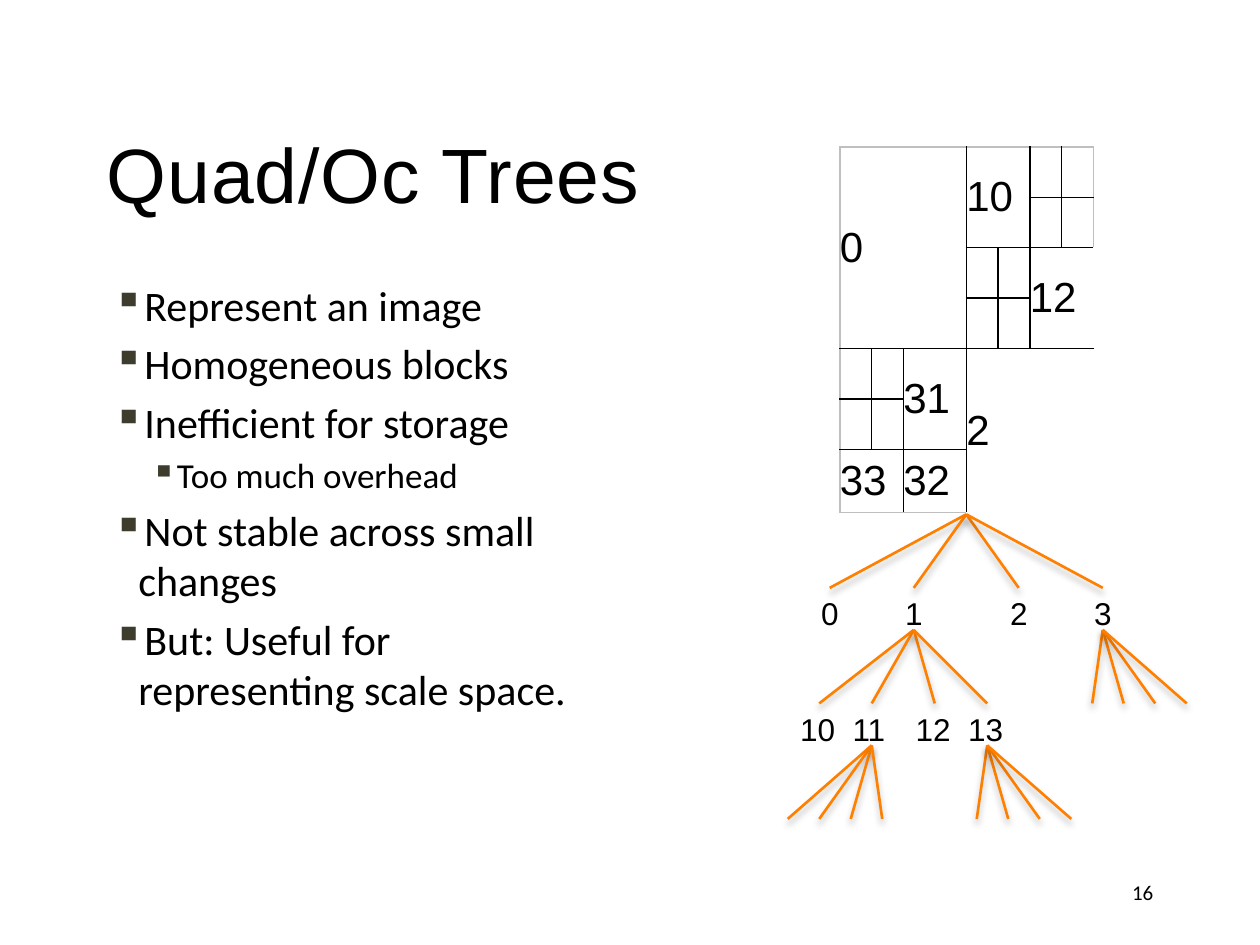
import pptx
import pptx.dml.color
import pptx.enum.shapes
import pptx.enum.text
import pptx.oxml
import pptx.oxml.ns
import pptx.util
from lxml import etree

Cm = pptx.util.Cm
Pt = pptx.util.Pt
RGBColor = pptx.dml.color.RGBColor
Anchor = pptx.enum.text.MSO_ANCHOR
Align = pptx.enum.text.PP_ALIGN
qn = pptx.oxml.ns.qn

BLACK = RGBColor(0x00, 0x00, 0x00)
WHITE = RGBColor(0xFF, 0xFF, 0xFF)
ORANGE = RGBColor(0xFF, 0x80, 0x00)
OLIVE = RGBColor(0x3E, 0x3D, 0x2D)
GREY = RGBColor(0xBF, 0xBF, 0xBF)

UNIT = 2.54 / 12
DROP = 7
STEP = 11

POINTS = [
    ("Represent an image", 0),
    ("Homogeneous blocks", 0),
    ("Inefficient for storage", 0),
    ("Too much overhead", 1),
    ("Not stable across small changes", 0),
    ("But: Useful for representing scale space.", 0),
]
COLS = [0.64, 0.64, 1.27, 0.64, 0.64, 0.64, 0.64]
ROWS = [0.64] * 6 + [1.27]
BLOCKS = {
    (0, 0): (4, 3, "0"), (0, 3): (2, 2, "10"), (2, 5): (2, 2, "12"),
    (4, 2): (2, 1, "31"), (4, 3): (3, 4, "2"),
    (6, 0): (1, 2, "33"), (6, 2): (1, 1, "32"),
}
FANS = [
    (0, 17, [4, 12, 22, 30]),
    (1, 12, [3, 8, 14, 19]),
    (1, 30, [29, 32, 35, 38]),
    (2, 8, [0, 3, 6, 9]),
    (2, 19, [18, 21, 24, 27]),
]
LABELS = [
    (0, [("0", 2), ("1", 10), ("2", 20), ("3", 28)]),
    (1, [("10", 0), ("11", 5), ("12", 11), ("13", 16)]),
]


def style(para, size, face):
    for run in para.runs:
        run.font.size = Pt(size)
        run.font.name = face
        run.font.color.rgb = BLACK


def add_text(shapes, box, text, size, face, anchor=Anchor.TOP, wrap=True):
    shape = shapes.add_textbox(*(Cm(v) for v in box))
    frame = shape.text_frame
    frame.word_wrap = wrap
    frame.vertical_anchor = anchor
    frame.text = text
    style(frame.paragraphs[0], size, face)
    return frame


def add_title(slide, box):
    frame = add_text(slide.shapes, box, "Quad/Oc Trees", 44, "Arial", Anchor.MIDDLE)
    frame.paragraphs[0].runs[0].font._element.set("spc", "50")


def add_points(slide, box):
    frame = add_text(slide.shapes, box, "", 24, "Calibri")
    for num, (text, level) in enumerate(POINTS):
        para = frame.add_paragraph() if num else frame.paragraphs[0]
        para.text = text
        para.level = level
        size = 20 if level else 24
        props = para._p.get_or_add_pPr()
        props.set("marL", str(Cm(1.4 if level else 0.64)))
        props.set("indent", str(-Cm(0.51)))
        tint = etree.SubElement(props, qn("a:buClr"))
        etree.SubElement(tint, qn("a:srgbClr"), val=str(OLIVE))
        etree.SubElement(props, qn("a:buChar"), char="▪")
        if num:
            para.space_before = Pt(size * 0.2)
        style(para, size, "Calibri")


def add_edge(cell, side, color):
    props = cell._tc.get_or_add_tcPr()
    line = etree.SubElement(props, qn("a:ln" + side), w=str(Pt(1)))
    fill = etree.SubElement(line, qn("a:solidFill"))
    etree.SubElement(fill, qn("a:srgbClr"), val=str(color))


def draw_block(table, row, col, high, wide):
    for r in range(row, row + high):
        for c in range(col, col + wide):
            cell = table.cell(r, c)
            sides = [
                ("L", c == col, c == 0),
                ("R", c == col + wide - 1, c == len(COLS) - 1),
                ("T", r == row, r == 0),
                ("B", r == row + high - 1, r == len(ROWS) - 1),
            ]
            for side, edge, outer in sides:
                if edge:
                    add_edge(cell, side, GREY if outer else BLACK)
            cell.fill.solid()
            cell.fill.fore_color.rgb = WHITE


def add_grid(slide, left, top):
    frame = slide.shapes.add_table(
        len(ROWS), len(COLS), Cm(left), Cm(top), Cm(sum(COLS)), Cm(sum(ROWS)))
    table = frame.table
    table.first_row = False
    table.horz_banding = False
    for col, width in zip(table.columns, COLS):
        col.width = Cm(width)
    for row, height in zip(table.rows, ROWS):
        row.height = Cm(height)
    taken = set()
    for (row, col), (high, wide, text) in BLOCKS.items():
        taken.update((row + r, col + c) for r in range(high) for c in range(wide))
        draw_block(table, row, col, high, wide)
        cell = table.cell(row, col)
        if high * wide > 1:
            cell.merge(table.cell(row + high - 1, col + wide - 1))
        cell.margin_left = cell.margin_right = 0
        cell.margin_top = cell.margin_bottom = 0
        cell.vertical_anchor = Anchor.MIDDLE
        cell.text_frame.text = text
        style(cell.text_frame.paragraphs[0], 24, "Arial")
    for row in range(len(ROWS)):
        for col in range(len(COLS)):
            if (row, col) not in taken:
                draw_block(table, row, col, 1, 1)


def add_branch(shapes, start, end):
    line = shapes.add_connector(
        pptx.enum.shapes.MSO_CONNECTOR.STRAIGHT, *(Cm(v) for v in start + end))
    line.line.color.rgb = ORANGE
    line.line.width = Pt(1.5)
    effect = etree.SubElement(line._element.spPr, qn("a:effectLst"))
    shade = etree.SubElement(
        effect, qn("a:outerShdw"), blurRad=str(Pt(4)), dist=str(Pt(3)),
        dir="5400000", rotWithShape="0")
    tint = etree.SubElement(shade, qn("a:srgbClr"), val=str(BLACK))
    etree.SubElement(tint, qn("a:alpha"), val="28000")


def add_tree(slide, left, top):
    shapes = slide.shapes.add_group_shape().shapes

    def place(x, y):
        return left + x * UNIT, top + y * UNIT

    for level, root, kids in FANS:
        for kid in kids:
            add_branch(shapes, place(root, level * STEP),
                       place(kid, level * STEP + DROP))
    for level, names in LABELS:
        for name, x in names:
            box = (*place(x, level * STEP + DROP), 0.52 + 0.35 * len(name), 1.03)
            frame = add_text(shapes, box, name, 18, "Arial", wrap=False)
            frame.auto_size = pptx.enum.text.MSO_AUTO_SIZE.SHAPE_TO_FIT_TEXT


def add_number(slide, box):
    frame = add_text(slide.shapes, box, "16", 12, "Calibri", Anchor.MIDDLE)
    frame.paragraphs[0].alignment = Align.RIGHT


def main():
    deck = pptx.Presentation()
    deck.slide_width = Cm(25.4)
    deck.slide_height = Cm(19.05)
    slide = deck.slides.add_slide(deck.slide_layouts[6])
    add_title(slide, (1.9, 1.9, 21.6, 3.18))
    add_points(slide, (1.9, 5.5, 10.6, 11.43))
    add_grid(slide, 16.93, 2.96)
    add_number(slide, (18.2, 17.36, 5.3, 1.27))
    add_tree(slide, 15.88, 10.37)
    deck.save("out.pptx")


if __name__ == "__main__":
    main()
